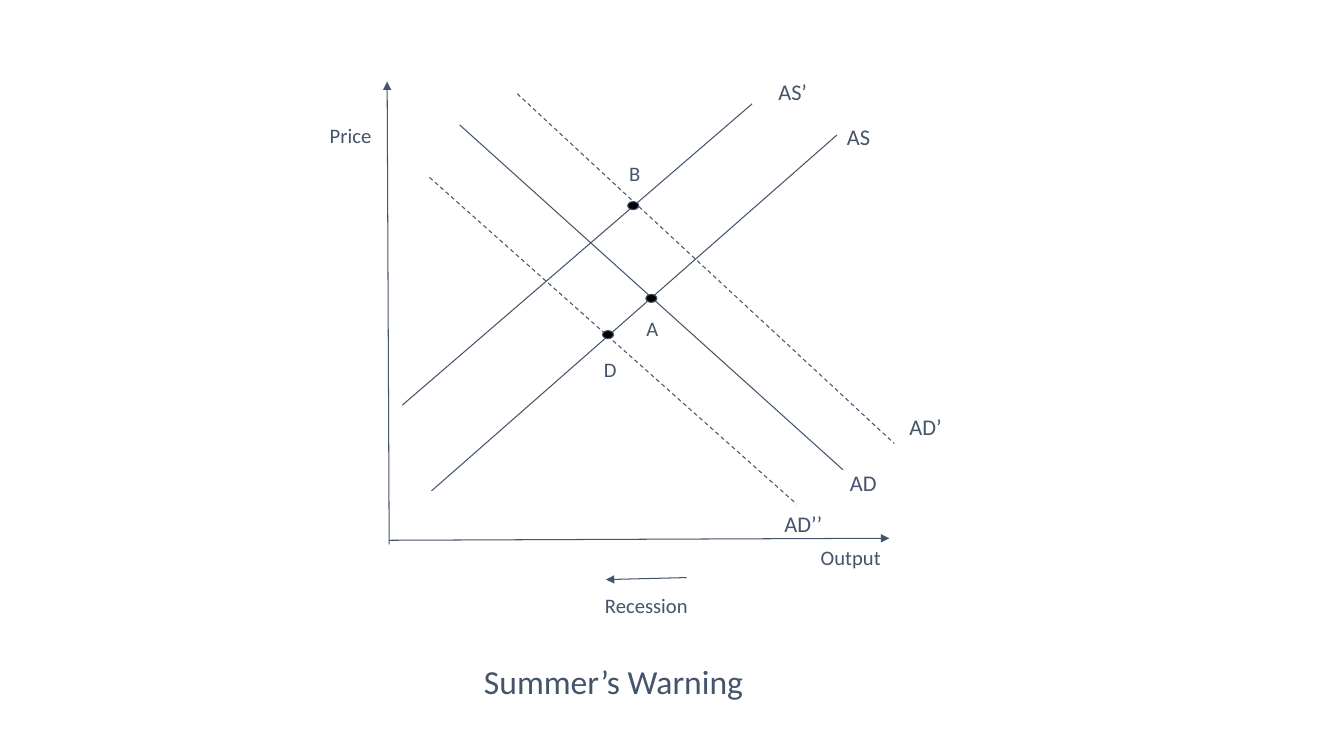
from dataclasses import dataclass

from lxml import etree
from pptx import Presentation
from pptx.dml.color import RGBColor
from pptx.enum.dml import MSO_LINE
from pptx.enum.shapes import MSO_CONNECTOR, MSO_SHAPE
from pptx.enum.text import MSO_ANCHOR, MSO_AUTO_SIZE, PP_ALIGN
from pptx.oxml.ns import qn
from pptx.util import Emu, Inches, Pt

STRAIGHT = MSO_CONNECTOR.STRAIGHT
OVAL = MSO_SHAPE.OVAL
DASH = MSO_LINE.DASH
TOP = MSO_ANCHOR.TOP
LEFT = PP_ALIGN.LEFT
NO_AUTOFIT = MSO_AUTO_SIZE.NONE
TITLE_ONLY = 5

# The slide is a grid of one-inch cells
COLUMNS, ROWS = 13.33, 7.5
SLATE, BLACK = "44546A", "000000"
FONT = "Calibri"
NAME_SIZE, CURVE_SIZE, TITLE_SIZE = 14.7, 16, 24
LINE_WIDTH = 0.75
LABEL_ROWS = 0.29
DOT_COLUMNS, DOT_ROWS = 0.11, 0.08
INSET = 0.13


@dataclass(frozen=True)
class Segment:
    start: tuple[float, float]
    end: tuple[float, float]
    arrow: bool = False
    dashed: bool = False


@dataclass(frozen=True)
class Label:
    text: str
    column: float
    row: float
    columns: float = 0.71
    size: float = CURVE_SIZE


@dataclass(frozen=True)
class Equilibrium:
    name: str
    centre: tuple[float, float]
    label_at: tuple[float, float]


SEGMENTS = [
    # Axes and the recession arrow
    Segment((3.86, 5.4), (3.84, 0.81), arrow=True),
    Segment((3.86, 5.36), (8.82, 5.34), arrow=True),
    Segment((6.81, 5.73), (6.01, 5.75), arrow=True),
    # Supply curves
    Segment((4.28, 4.87), (8.3, 1.34)),
    Segment((3.99, 4.02), (7.46, 1.03)),
    # Demand curves
    Segment((4.56, 1.24), (8.36, 4.66)),
    Segment((5.13, 0.93), (8.87, 4.4), dashed=True),
    Segment((4.26, 1.76), (7.9, 5), dashed=True),
]

LABELS = [
    Label("Price", 3.14, 1.09, 1.41, NAME_SIZE),
    Label("Output", 8.01, 5.28, 1.29, NAME_SIZE),
    Label("Recession", 5.87, 5.75, 1.59, NAME_SIZE),
    Label("AS", 8.27, 1.09),
    Label("AS’", 7.59, 0.64),
    Label("AD", 8.3, 4.52),
    Label("AD’", 8.89, 3.97),
    Label("AD’’", 7.65, 4.93),
]

EQUILIBRIA = [
    Equilibrium("A", (6.46, 2.96), (6.28, 3)),
    Equilibrium("B", (6.28, 2.04), (6.11, 1.47)),
    Equilibrium("D", (6.03, 3.32), (5.86, 3.41)),
]


def cells(*lengths: float) -> list[Emu]:
    return [Inches(length) for length in lengths]


def colour(value: str) -> RGBColor:
    return RGBColor.from_string(value)


def write(frame, text: str, *, size: float, wrap: bool = True) -> None:
    frame.word_wrap = wrap
    frame.auto_size = NO_AUTOFIT
    frame.vertical_anchor = TOP
    frame.margin_left = frame.margin_right = Inches(INSET)
    frame.margin_top = frame.margin_bottom = Inches(INSET)
    paragraph = frame.paragraphs[0]
    paragraph.alignment = LEFT
    paragraph.line_spacing = 1.0
    run = paragraph.add_run()
    run.text = text
    run.font.name = FONT
    run.font.size = Pt(size)
    run.font.color.rgb = colour(SLATE)


def outline(line) -> None:
    line.color.rgb = colour(SLATE)
    line.width = Pt(LINE_WIDTH)


def draw_segment(slide, segment: Segment) -> None:
    connector = slide.shapes.add_connector(
        STRAIGHT, *cells(*segment.start, *segment.end))
    outline(connector.line)
    if segment.dashed:
        connector.line.dash_style = DASH
    properties = connector._element.spPr
    if segment.arrow:
        line = properties.find(qn("a:ln"))
        etree.SubElement(line, qn("a:tailEnd"), type="triangle")
    etree.SubElement(properties, qn("a:effectLst"))


def draw_label(slide, label: Label) -> None:
    box = slide.shapes.add_textbox(
        *cells(label.column, label.row, label.columns, LABEL_ROWS))
    write(box.text_frame, label.text, size=label.size)


def draw_equilibrium(slide, point: Equilibrium) -> None:
    column, row = point.centre
    dot = slide.shapes.add_shape(OVAL, *cells(
        column - DOT_COLUMNS / 2, row - DOT_ROWS / 2, DOT_COLUMNS, DOT_ROWS))
    dot.shadow.inherit = False
    dot.fill.solid()
    dot.fill.fore_color.rgb = colour(BLACK)
    outline(dot.line)
    draw_label(slide, Label(point.name, *point.label_at, 0.35, NAME_SIZE))


def main() -> None:
    deck = Presentation()
    deck.slide_width, deck.slide_height = cells(COLUMNS, ROWS)
    slide = deck.slides.add_slide(deck.slide_layouts[TITLE_ONLY])

    # Title below the diagram
    title = slide.shapes.title
    title.left, title.top, title.width, title.height = cells(4.67, 6.43, 3.34, 0.94)
    write(title.text_frame, "Summer’s Warning", size=TITLE_SIZE)

    # Supply and demand diagram
    for segment in SEGMENTS:
        draw_segment(slide, segment)
    for label in LABELS:
        draw_label(slide, label)
    for point in EQUILIBRIA:
        draw_equilibrium(slide, point)

    deck.save("out.pptx")


if __name__ == "__main__":
    main()
